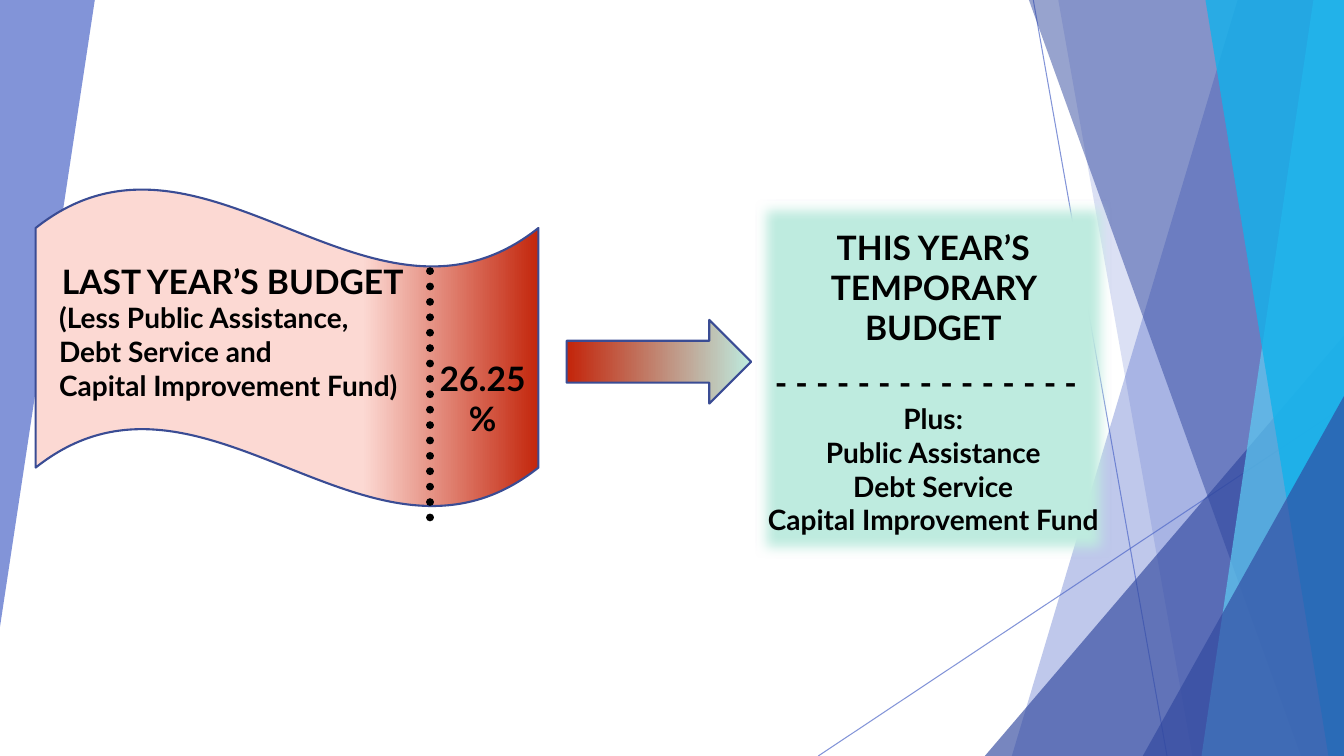
from dataclasses import dataclass
from lxml.etree import SubElement
from pptx import Presentation
from pptx.dml.color import RGBColor
from pptx.enum.dml import MSO_LINE
from pptx.enum.shapes import MSO_CONNECTOR, MSO_SHAPE
from pptx.enum.text import MSO_ANCHOR, MSO_AUTO_SIZE, PP_ALIGN
from pptx.oxml.ns import qn
from pptx.util import Cm, Pt


@dataclass(frozen=True)
class Theme:
    font: str = "Lato"
    head: int = 24
    body: int = 20
    text: str = "000000"
    outline: str = "3A4C94"
    blue: str = "4E67C8"
    navy: str = "31489F"
    aqua: str = "5ECCF3"
    cyan: str = "12B2EB"
    pink: str = "FCD9D3"
    red: str = "C3260C"
    mint: str = "BEEBDF"


T = Theme()
W, H = 33.87, 19.05

# Content: text, size, left indent, right indent (cm), space before (pt)
LAST_YEAR = [
    ("LAST YEAR’S BUDGET", T.head, 0.41, 0, 0),
    ("(Less Public Assistance,", T.body, 0.34, 0, 0),
    ("Debt Service and", T.body, 0.34, 0, 0),
    ("Capital Improvement Fund)", T.body, 0.34, 0, 0),
]
SHARE = [("26.25%", T.head, 0, 0, 0)]
THIS_YEAR = [
    ("THIS YEAR’S TEMPORARY BUDGET", T.head, 0, 0, 0),
    (" ".join("-" * 15), T.head, 0, 0.37, 10),
    ("Plus:", T.body, 0, 0, 0),
    ("Public Assistance", T.body, 0, 0, 0),
    ("Debt Service", T.body, 0, 0, 0),
    ("Capital Improvement Fund", T.body, 0, 0, 0),
]

# Backdrop, back to front: kind, geometry (cm), colour, opacity %
# A panel runs from its top x and bottom x to the right edge of the slide.
BACKDROP = [
    ("wedge", (2.39, 15.8), T.blue, 70),
    ("line", (26.04, 0, 29.41, H), T.blue, 70),
    ("line", (W, 10.24, 20.62, H), T.blue, 70),
    ("panel", (31.19, 25.5), T.blue, 36),
    ("panel", (26.67, 30.05), T.blue, 20),
    ("corner", (24.82, 8.46), T.navy, 66),
    ("panel", (25.93, 32.79), T.navy, 50),
    ("panel", (33.1, 30.28), T.aqua, 70),
    ("panel", (30.38, 33.48), T.cyan, 80),
    ("corner", (28.8, 9.98), T.navy, 66),
]

prs = Presentation()
prs.slide_width, prs.slide_height = Cm(W), Cm(H)
shapes = prs.slides.add_slide(prs.slide_layouts[6]).shapes


def rgb(colour):
    return RGBColor.from_string(colour)


def set_opacity(s, percent):
    for clr in s._element.spPr.iter(qn("a:srgbClr")):
        SubElement(clr, qn("a:alpha"), val=str(percent * 1000))


def paint(s, fill, outline=None):
    s.shadow.inherit = False
    s.fill.solid()
    s.fill.fore_color.rgb = rgb(fill)
    if outline:
        s.line.color.rgb = rgb(outline)
        s.line.width = Pt(1.5)
    else:
        s.line.fill.background()


def paint_gradient(s, stops):
    paint(s, stops[0][1], T.outline)
    spPr = s._element.spPr
    solid = spPr.find(qn("a:solidFill"))
    grad = spPr.makeelement(qn("a:gradFill"), {"rotWithShape": "1"})
    stop_list = SubElement(grad, qn("a:gsLst"))
    for pos, colour in stops:
        gs = SubElement(stop_list, qn("a:gs"), pos=str(pos * 1000))
        SubElement(gs, qn("a:srgbClr"), val=colour)
    SubElement(grad, qn("a:lin"), ang="0", scaled="0")
    spPr.replace(solid, grad)


def add_shape(kind, x, y, w, h):
    return shapes.add_shape(kind, Cm(x), Cm(y), Cm(w), Cm(h))


def add_line(x1, y1, x2, y2, colour, width):
    s = shapes.add_connector(MSO_CONNECTOR.STRAIGHT, Cm(x1), Cm(y1), Cm(x2), Cm(y2))
    s.line.color.rgb = rgb(colour)
    s.line.width = Pt(width)
    SubElement(s._element.spPr, qn("a:effectLst"))
    return s


def add_polygon(points):
    pts = [(Cm(x), Cm(y)) for x, y in points]
    builder = shapes.build_freeform(*pts[0])
    builder.add_line_segments(pts[1:], close=True)
    return builder.convert_to_shape()


def write(s, lines, align, anchor=MSO_ANCHOR.TOP):
    tf = s.text_frame
    tf.word_wrap = True
    tf.vertical_anchor = anchor
    for i, (text, size, left, right, before) in enumerate(lines):
        p = tf.paragraphs[0] if i == 0 else tf.add_paragraph()
        p.alignment = align
        p.space_before = Pt(before)
        # Zero indents are stated too, so none carries over from the line above
        for side, indent in (("marL", left), ("marR", right), ("indent", 0)):
            p._p.get_or_add_pPr().set(side, str(Cm(indent)))
        r = p.add_run()
        r.text = text
        r.font.name, r.font.size, r.font.bold = T.font, Pt(size), True
        r.font.color.rgb = rgb(T.text)
    return tf


# Backdrop
for kind, geo, colour, opacity in BACKDROP:
    if kind == "line":
        s = add_line(*geo, colour, 0.75)
    else:
        a, b = geo
        if kind == "corner":
            s = add_shape(MSO_SHAPE.ISOSCELES_TRIANGLE, a, b, W - a, H - b)
            s.adjustments[0] = 1.0
        elif kind == "panel":
            s = add_polygon([(a, 0), (W, 0), (W, H), (b, H)])
        else:
            s = add_polygon([(0, 0), (a, 0), (0, b)])
        paint(s, colour)
    set_opacity(s, opacity)

# Last year's budget
wave = add_shape(MSO_SHAPE.WAVE, 0.9, 4.74, 12.67, 8.05)
paint_gradient(wave, [(1, T.pink), (65, T.pink), (100, T.red)])
tf = write(wave, LAST_YEAR, PP_ALIGN.LEFT, MSO_ANCHOR.MIDDLE)
tf.margin_bottom = Cm(0.97)

# Share carried over
divider = add_line(10.84, 6.83, 10.84, 13.06, T.text, 5.5)
divider.line.dash_style = MSO_LINE.ROUND_DOT
divider._element.spPr.find(qn("a:ln")).set("cap", "rnd")
share = shapes.add_textbox(Cm(10.54), Cm(8.89), Cm(3.25), Cm(1.27))
write(share, SHARE, PP_ALIGN.CENTER).auto_size = MSO_AUTO_SIZE.SHAPE_TO_FIT_TEXT

# This year's temporary budget, with soft edges
box = add_shape(MSO_SHAPE.FLOWCHART_PROCESS, 19.05, 5.03, 8.94, 9.02)
paint(box, T.mint, T.outline)
effects = box._element.spPr.find(qn("a:effectLst"))
SubElement(effects, qn("a:softEdge"), rad=str(Pt(9)))
tf = write(box, THIS_YEAR, PP_ALIGN.CENTER)
tf.margin_top = Cm(0.68)
tf.margin_left = tf.margin_right = Cm(0.2)

# Arrow between the two budgets
arrow = add_shape(MSO_SHAPE.RIGHT_ARROW, 14.28, 8.06, 4.65, 2.11)
paint_gradient(arrow, [(1, T.red), (100, T.mint)])

prs.save("out.pptx")
